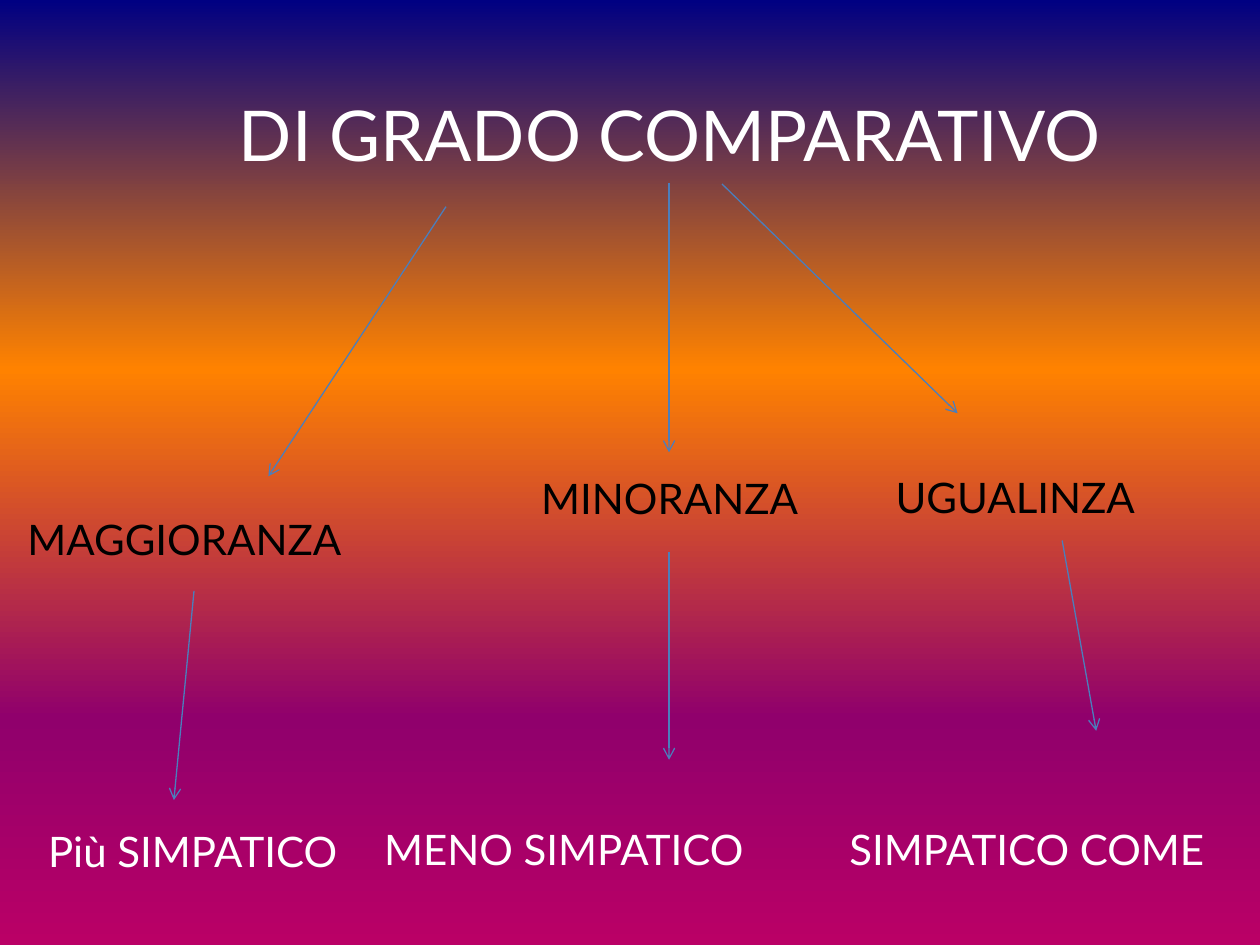
from dataclasses import dataclass

from lxml.etree import SubElement
from pptx import Presentation
from pptx.dml.color import RGBColor
from pptx.enum.shapes import MSO_CONNECTOR as Connector
from pptx.enum.text import MSO_AUTO_SIZE as AutoSize, PP_ALIGN as Align
from pptx.oxml.ns import qn
from pptx.slide import Slide
from pptx.util import Inches, Pt


@dataclass(frozen=True)
class Theme:
    font: str = "Lato"
    title_size: int = 40
    label_size: int = 24
    light: str = "FFFFFF"
    dark: str = "000000"
    arrow: str = "4B7EBC"
    arrow_width: float = 0.75
    sunset: tuple = (
        (0, "000082"),
        (39, "FF8200"),
        (76, "90006C"),
        (100, "BA0066"),
        (100, "FF0000"),
    )


@dataclass(frozen=True)
class Label:
    text: str
    left: float
    top: float
    width: float
    color: str
    align: Align = Align.CENTER
    size: int = Theme.label_size
    height: float = 0.5


@dataclass(frozen=True)
class Arrow:
    start: tuple[float, float]
    end: tuple[float, float]


THEME = Theme()

TITLE = Label("DI GRADO COMPARATIVO", 1.38, 0.68, 7.87, THEME.light,
              size=THEME.title_size, height=0.77)

DEGREES = (
    Label("MAGGIORANZA", 0.12, 4.03, 2.83, THEME.dark, Align.LEFT),
    Label("MINORANZA", 2.6, 3.7, 5.43, THEME.dark),
    Label("UGUALINZA", 7.01, 3.69, 2.83, THEME.dark, Align.LEFT),
)

EXAMPLES = (
    Label("Più SIMPATICO", -0.24, 6.5, 3.54, THEME.light),
    Label("MENO SIMPATICO", 2.95, 6.49, 3.57, THEME.light, Align.LEFT),
    Label("SIMPATICO COME", 6.02, 6.49, 4.26, THEME.light),
)

ARROWS = (
    Arrow((3.54, 1.64), (2.13, 3.78)),
    Arrow((5.31, 1.45), (5.31, 3.59)),
    Arrow((5.73, 1.46), (7.6, 3.28)),
    Arrow((1.54, 4.69), (1.38, 6.35)),
    Arrow((5.31, 4.38), (5.31, 6.03)),
    Arrow((8.43, 4.29), (8.7, 5.8)),
)


def paint_background(slide: Slide) -> None:
    fill = slide.background.fill
    fill.gradient()
    fill.gradient_angle = 270
    stops = next(slide.element.iter(qn("a:gsLst")))
    for stop in list(stops):
        stops.remove(stop)
    for percent, color in THEME.sunset:
        stop = SubElement(stops, qn("a:gs"), pos=str(percent * 1000))
        SubElement(stop, qn("a:srgbClr"), val=color)


def draw_label(slide: Slide, label: Label) -> None:
    box = slide.shapes.add_textbox(Inches(label.left), Inches(label.top),
                                   Inches(label.width), Inches(label.height))
    frame = box.text_frame
    frame.word_wrap = True
    frame.auto_size = AutoSize.SHAPE_TO_FIT_TEXT
    frame.text = label.text
    para = frame.paragraphs[0]
    para.alignment = label.align
    font = para.runs[0].font
    font.name = THEME.font
    font.size = Pt(label.size)
    font.color.rgb = RGBColor.from_string(label.color)


def draw_arrow(slide: Slide, arrow: Arrow) -> None:
    points = [Inches(value) for value in arrow.start + arrow.end]
    connector = slide.shapes.add_connector(Connector.STRAIGHT, *points)
    connector.line.color.rgb = RGBColor.from_string(THEME.arrow)
    connector.line.width = Pt(THEME.arrow_width)
    SubElement(connector.line._get_or_add_ln(), qn("a:tailEnd"), type="arrow")
    SubElement(connector.element.spPr, qn("a:effectLst"))


def main() -> None:
    deck = Presentation()
    deck.slide_width = Inches(10)
    deck.slide_height = Inches(7.5)
    slide = deck.slides.add_slide(deck.slide_layouts[6])
    paint_background(slide)
    for arrow in ARROWS:
        draw_arrow(slide, arrow)
    for label in (TITLE, *DEGREES, *EXAMPLES):
        draw_label(slide, label)
    deck.save("out.pptx")


if __name__ == "__main__":
    main()
